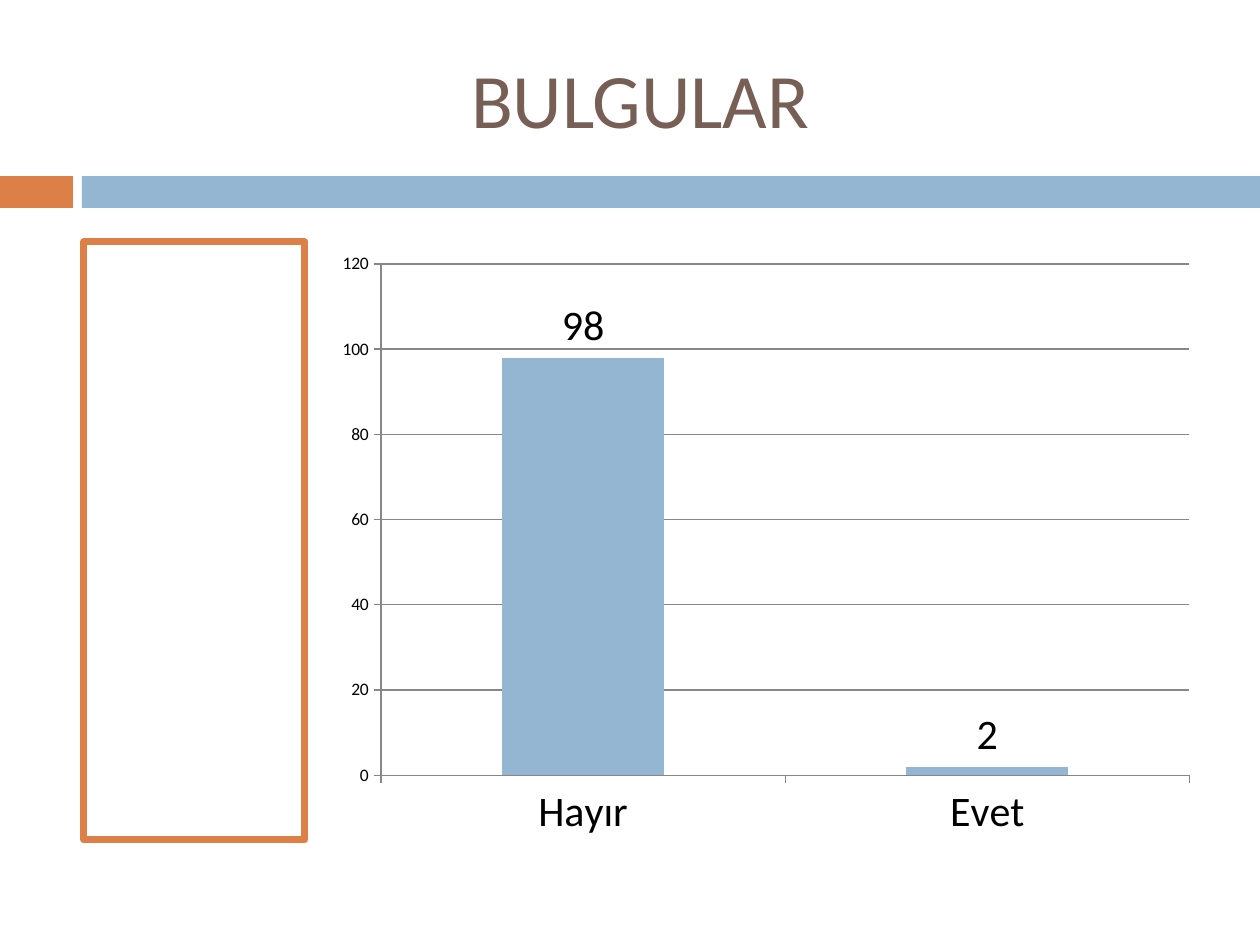
import pptx
import pptx.util
import pptx.chart.data
import pptx.dml.color
import pptx.enum.chart
import pptx.enum.shapes
import pptx.enum.text
from dataclasses import dataclass


@dataclass
class Theme:
    font: str = "Calibri"
    blue: str = "94B6D2"
    orange: str = "DD8047"
    brown: str = "775F55"
    gray: str = "878787"
    black: str = "000000"
    head: int = 44
    label: int = 24
    tick: int = 10


def px(n):
    return pptx.util.Emu(round(n * 914400 / 126))


def style(font, size, color):
    font.name = theme.font
    font.size = pptx.util.Pt(size)
    font.color.rgb = rgb(color)


theme = Theme()
rgb = pptx.dml.color.RGBColor.from_string
kind = pptx.enum.chart
rect = pptx.enum.shapes.MSO_SHAPE.RECTANGLE

deck = pptx.Presentation()
deck.slide_width, deck.slide_height = px(1260), px(945)
slide = deck.slides.add_slide(deck.slide_layouts[5])
shapes = slide.shapes

for left, width, color in [(0, 73, theme.orange), (82, 1178, theme.blue)]:
    band = shapes.add_shape(rect, px(left), px(176), px(width), px(32))
    band.shadow.inherit = False
    band.fill.solid()
    band.fill.fore_color.rgb = rgb(color)
    band.line.fill.background()

title = shapes.title
title.left, title.top, title.width, title.height = px(84), px(38), px(1113), px(120)
frame = title.text_frame
frame.text = "BULGULAR"
frame.vertical_anchor = pptx.enum.text.MSO_ANCHOR.MIDDLE
line = frame.paragraphs[0]
line.alignment = pptx.enum.text.PP_ALIGN.CENTER
style(line.runs[0].font, theme.head, theme.brown)

box = shapes.add_shape(rect, px(84), px(242), px(221), px(598))
box.shadow.inherit = False
box.fill.background()
box.line.color.rgb = rgb(theme.orange)
box.line.width = pptx.util.Pt(4)

data = pptx.chart.data.CategoryChartData()
data.categories = ["Hayır", "Evet"]
data.add_series("Series 1", [98, 2])
chart = shapes.add_chart(kind.XL_CHART_TYPE.COLUMN_CLUSTERED,
                         px(325), px(242), px(882), px(609), data).chart
chart.has_legend = False
chart.has_title = False
style(chart.font, theme.tick, theme.black)

plot = chart.plots[0]
plot.gap_width = 150
plot.vary_by_categories = False
bars = plot.series[0]
bars.format.fill.solid()
bars.format.fill.fore_color.rgb = rgb(theme.blue)
labels = bars.data_labels
labels.show_value = True
labels.position = kind.XL_LABEL_POSITION.OUTSIDE_END
style(labels.font, theme.label, theme.black)

scale = chart.value_axis
scale.minimum_scale, scale.maximum_scale, scale.major_unit = 0, 120, 20
scale.has_major_gridlines = True
names = chart.category_axis
for axis, size in [(scale, theme.tick), (names, theme.label)]:
    axis.major_tick_mark = kind.XL_TICK_MARK.OUTSIDE
    axis.format.line.color.rgb = rgb(theme.gray)
    style(axis.tick_labels.font, size, theme.black)
scale.major_gridlines.format.line.color.rgb = rgb(theme.gray)

deck.save("out.pptx")
